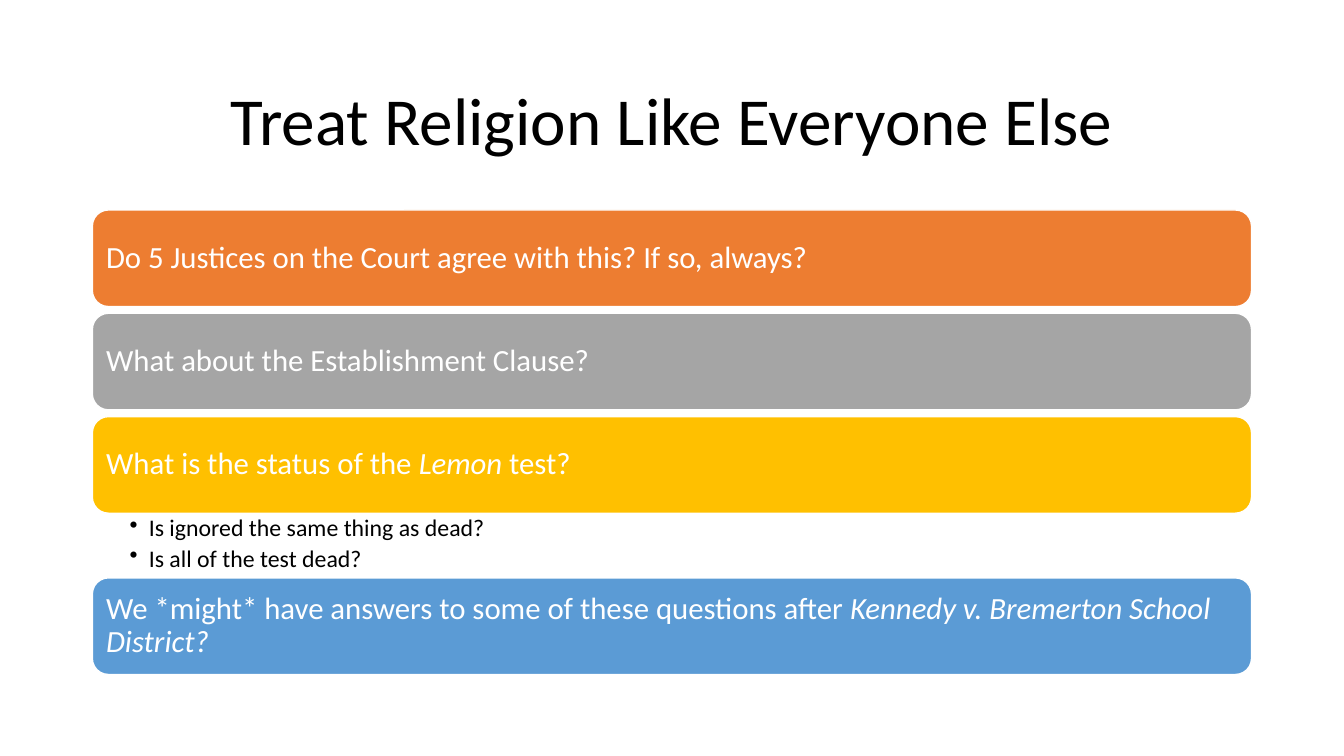
"""Build the slide "Treat Religion Like Everyone Else" on a grid of 160 columns by 90 rows."""
from dataclasses import dataclass

from lxml.etree import SubElement
from pptx import Presentation
from pptx.dml.color import RGBColor
from pptx.enum.shapes import MSO_SHAPE as Preset
from pptx.enum.text import MSO_ANCHOR as Anchor, PP_ALIGN as Align
from pptx.oxml.ns import qn
from pptx.shapes.base import BaseShape
from pptx.slide import Slide
from pptx.text.text import TextFrame, _Paragraph as Paragraph
from pptx.util import Inches, Pt

COLUMNS, ROWS = 160, 90
CELL = Inches(1) // 12
LEFT, WIDTH = 11, 138
TITLE_TOP, TITLE_HEIGHT = 7.3, 14.9
LIST_TOP, BAR_HEIGHT, BAR_GAP = 25, 11.5, 0.8
BULLETS_HEIGHT = 7.7

FONT = "Calibri"
BLACK = RGBColor(0x00, 0x00, 0x00)
WHITE = RGBColor(0xFF, 0xFF, 0xFF)
ORANGE = RGBColor(0xED, 0x7D, 0x31)
GRAY = RGBColor(0xA5, 0xA5, 0xA5)
GOLD = RGBColor(0xFF, 0xC0, 0x00)
BLUE = RGBColor(0x5B, 0x9B, 0xD5)


@dataclass(frozen=True)
class Question:
    fill: RGBColor
    text: str
    italic: str = ""
    ending: str = ""
    bullets: tuple[str, ...] = ()


TITLE = "Treat Religion Like Everyone Else"
QUESTIONS = (
    Question(ORANGE, "Do 5 Justices on the Court agree with this? If so, always?"),
    Question(GRAY, "What about the Establishment Clause?"),
    Question(GOLD, "What is the status of the ", "Lemon", " test?",
             ("Is ignored the same thing as dead?", "Is all of the test dead?")),
    Question(BLUE, "We *might* have answers to some of these questions after ",
             "Kennedy v. Bremerton School District?"),
)


def cells(count: float) -> int:
    return round(count * CELL)


def box(top: float, height: float) -> tuple[int, int, int, int]:
    return cells(LEFT), cells(top), cells(WIDTH), cells(height)


def set_frame(frame: TextFrame, anchor: Anchor, left: float, top: float,
              right: float, bottom: float) -> None:
    frame.word_wrap = True
    frame.vertical_anchor = anchor
    frame.margin_left, frame.margin_top = Inches(left), Inches(top)
    frame.margin_right, frame.margin_bottom = Inches(right), Inches(bottom)


def style(paragraph: Paragraph, size: float, color: RGBColor, align: Align = Align.LEFT) -> None:
    paragraph.alignment = align
    paragraph.line_spacing = 0.9
    paragraph.font.name = FONT
    paragraph.font.size = Pt(size)
    paragraph.font.color.rgb = color


def add_title(slide: Slide) -> None:
    frame = slide.shapes.add_textbox(*box(TITLE_TOP, TITLE_HEIGHT)).text_frame
    set_frame(frame, Anchor.MIDDLE, 0.1, 0.05, 0.1, 0.05)
    frame.text = TITLE
    style(frame.paragraphs[0], 48, BLACK, Align.CENTER)


def add_bar(slide: Slide, question: Question, top: float) -> BaseShape:
    bar = slide.shapes.add_shape(Preset.ROUNDED_RECTANGLE, *box(top, BAR_HEIGHT))
    bar.shadow.inherit = False
    bar.fill.solid()
    bar.fill.fore_color.rgb = question.fill
    bar.line.color.rgb = WHITE
    bar.line.width = Pt(1)
    set_frame(bar.text_frame, Anchor.MIDDLE, 0.09, 0.09, 0.09, 0.09)
    paragraph = bar.text_frame.paragraphs[0]
    style(paragraph, 22, WHITE)
    for text, italic in ((question.text, False), (question.italic, True), (question.ending, False)):
        if text:
            run = paragraph.add_run()
            run.text = text
            run.font.italic = italic
    return bar


def add_bullets(slide: Slide, bullets: tuple[str, ...], top: float) -> None:
    frame = slide.shapes.add_textbox(*box(top, BULLETS_HEIGHT)).text_frame
    set_frame(frame, Anchor.TOP, 0.37, 0.03, 0.17, 0.03)
    frame.text = "\n".join(bullets)
    for paragraph in frame.paragraphs:
        style(paragraph, 17, BLACK)
        paragraph.level = 1
        paragraph.space_after = Pt(3.4)
        properties = paragraph._p.get_or_add_pPr()
        properties.set("marL", str(Inches(0.19)))
        properties.set("indent", str(-Inches(0.19)))
        bullet = SubElement(properties, qn("a:buChar"), char="•")
        properties.find(qn("a:defRPr")).addprevious(bullet)


def main() -> None:
    presentation = Presentation()
    presentation.slide_width, presentation.slide_height = cells(COLUMNS), cells(ROWS)
    slide = presentation.slides.add_slide(presentation.slide_layouts[6])
    add_title(slide)
    top = LIST_TOP
    for question in QUESTIONS:
        add_bar(slide, question, top)
        top += BAR_HEIGHT
        if question.bullets:
            add_bullets(slide, question.bullets, top)
            top += BULLETS_HEIGHT
        else:
            top += BAR_GAP
    presentation.save("out.pptx")


if __name__ == "__main__":
    main()
